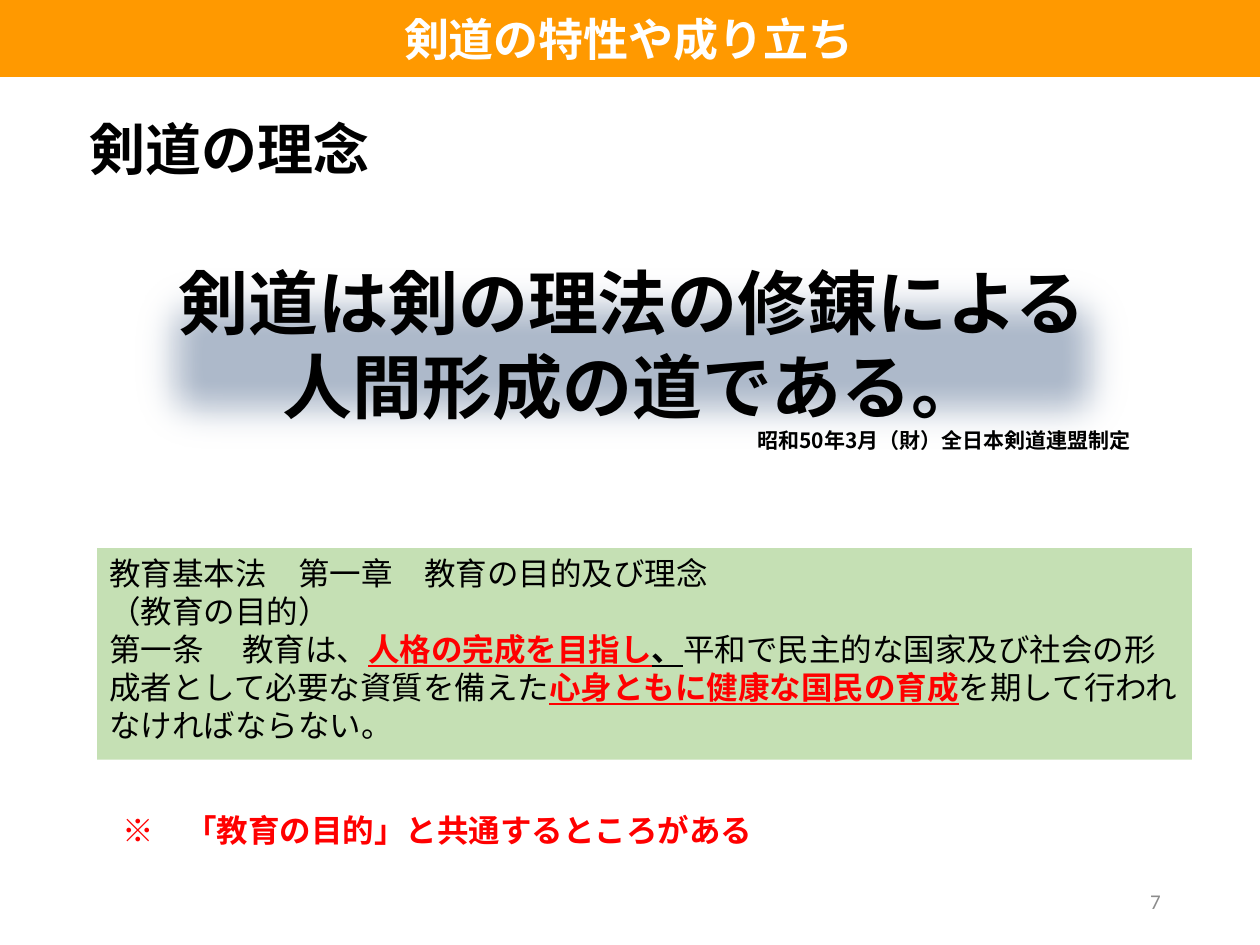
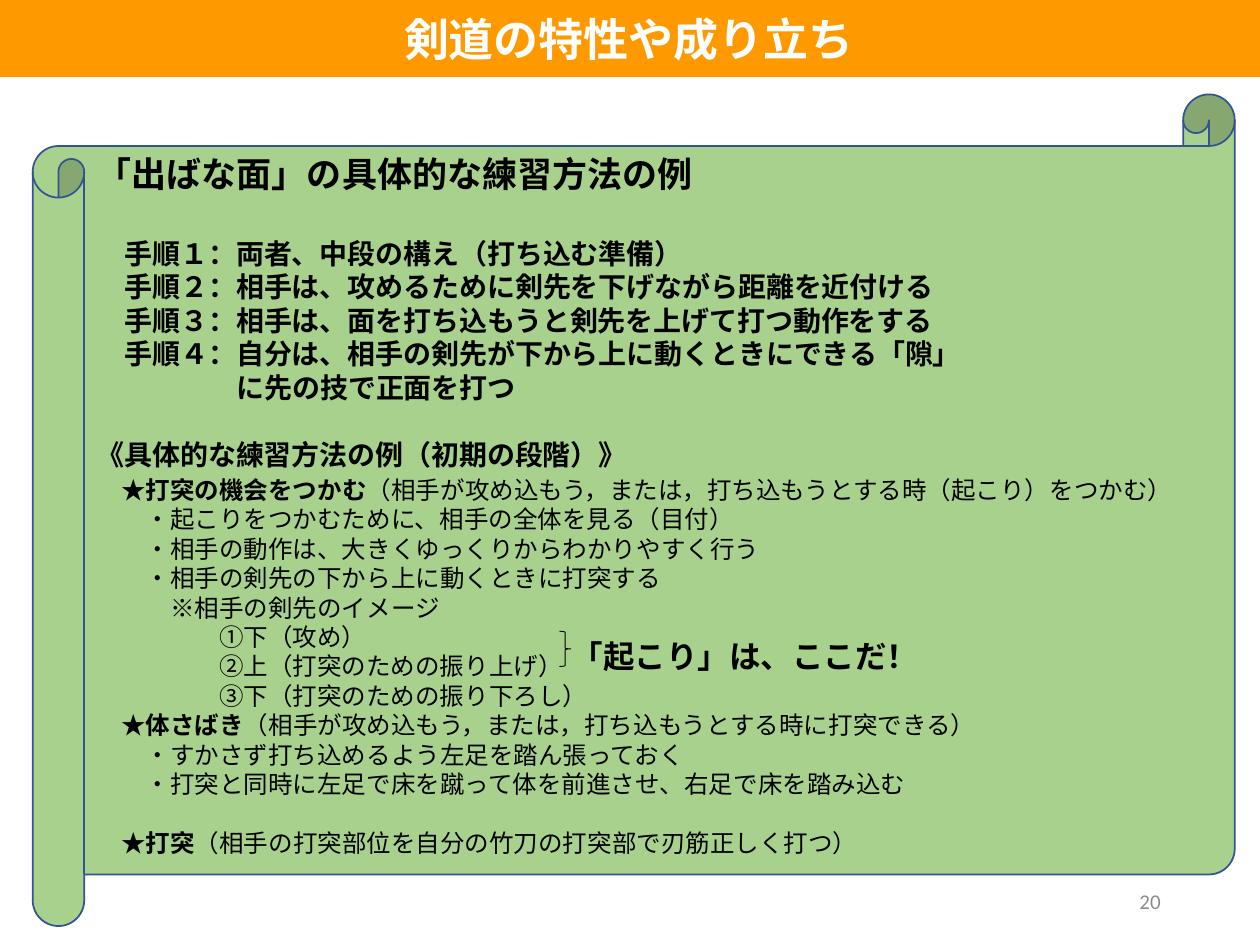
from dataclasses import dataclass

from lxml import etree
from pptx import Presentation
from pptx.dml.color import RGBColor
from pptx.enum.shapes import MSO_SHAPE as SHAPE
from pptx.enum.text import MSO_ANCHOR as ANCHOR, PP_ALIGN as ALIGN
from pptx.oxml.ns import qn
from pptx.util import Inches, Pt


@dataclass(frozen=True)
class Theme:
    font: str = "Noto Sans CJK JP"
    number_font: str = "Calibri"
    band: str = "FF9900"
    white: str = "FFFFFF"
    black: str = "000000"
    red: str = "FF0000"
    grey: str = "8C8C8C"
    motto: str = "ADB9CA"
    law: str = "C5E0B4"
    scroll: str = "A9D18E"
    scroll_line: str = "325491"
    band_size: float = 25.7
    title: int = 32
    motto_size: int = 40
    lead: int = 20
    body: int = 18
    step: int = 16
    detail: int = 14
    small: int = 12
    leading: float = 1.2


T = Theme()
KEY = {"color": T.red, "bold": True, "underline": True}


def rgb(value):
    return RGBColor.from_string(value)


def para(*runs, size=T.body, align=ALIGN.LEFT, indent=0, before=0, **fmt):
    """Describe a paragraph; a run is a string or (string, format), indent counts characters."""
    return {"runs": runs, "size": size, "align": align, "indent": indent,
            "before": before, "fmt": fmt}


def add_run(p, text, size, color=T.black, font=T.font, **fmt):
    r = p.add_run()
    r.text = text
    for name, value in {"size": Pt(size), "name": font, **fmt}.items():
        setattr(r.font, name, value)
    r.font.color.rgb = rgb(color)
    etree.SubElement(r.font._element, qn("a:ea"), typeface=font)


def write(s, paras, anchor=ANCHOR.TOP, wrap=True):
    tf = s.text_frame
    tf.word_wrap = wrap
    tf.vertical_anchor = anchor
    for i, item in enumerate(paras):
        p = tf.paragraphs[0] if i == 0 else tf.add_paragraph()
        size = item["size"]
        if item["indent"]:
            p._p.get_or_add_pPr().set("marL", str(Pt(item["indent"] * size)))
        for name, value in {"alignment": item["align"],
                            "line_spacing": Pt(size * T.leading),
                            "space_before": Pt(item["before"])}.items():
            setattr(p, name, value)
        for run in item["runs"]:
            text, extra = (run, {}) if isinstance(run, str) else run
            add_run(p, text, **{"size": size, **item["fmt"], **extra})


def add_text(sp, box, paras, **options):
    s = sp.add_textbox(*map(Inches, box))
    write(s, paras, **options)


def add_panel(sp, kind, box, fill=None, line=None, width=1):
    s = sp.add_shape(kind, *map(Inches, box))
    s.shadow.inherit = False
    if fill:
        s.fill.solid()
        s.fill.fore_color.rgb = rgb(fill)
    else:
        s.fill.background()
    if line:
        s.line.color.rgb = rgb(line)
        s.line.width = Pt(width)
    else:
        s.line.fill.background()
    return s


def soften(s, radius):
    effects = s._element.spPr.find(qn("a:effectLst"))
    etree.SubElement(effects, qn("a:softEdge"), rad=str(Inches(radius)))


def new_slide(prs, number):
    """Add a slide with the heading band and page number."""
    sp = prs.slides.add_slide(prs.slide_layouts[6]).shapes
    band = add_panel(sp, SHAPE.RECTANGLE, (-0.02, 0, 10.02, 0.61), T.band)
    tf = band.text_frame
    tf.margin_left = tf.margin_right = Inches(0.07)
    tf.margin_top = tf.margin_bottom = Inches(0.04)
    write(band, [para("剣道の特性や成り立ち", size=T.band_size, align=ALIGN.CENTER,
                      color=T.white, bold=True)], anchor=ANCHOR.MIDDLE, wrap=False)
    add_text(sp, (7.06, 6.95, 2.25, 0.4),
             [para(str(number), size=T.small, align=ALIGN.RIGHT, color=T.grey,
                   font=T.number_font)], anchor=ANCHOR.MIDDLE)
    return sp


def step(text, indent=1, before=0):
    return para(text, size=T.step, indent=indent, before=before, bold=True)


def star(name, note, before=0):
    return para("★", (name, {"bold": True}), note, size=T.detail, indent=1, before=before)


def detail(text, indent=2):
    return para(text, size=T.detail, indent=indent)


def idea_slide(prs):
    sp = new_slide(prs, 7)
    add_text(sp, (0.34, 0.86, 2.97, 0.64),
             [para("剣道の理念", size=T.title, align=ALIGN.CENTER, bold=True)])

    motto = add_panel(sp, SHAPE.RECTANGLE, (0.96, 2.01, 8.11, 1.65), T.motto)
    soften(motto, 0.35)
    lines = [para(text, size=T.motto_size, align=ALIGN.CENTER, bold=True)
             for text in ("剣道は剣の理法の修錬による", "人間形成の道である。")]
    write(motto, lines + [para("昭和50年3月（財）全日本剣道連盟制定", size=T.small,
                               align=ALIGN.RIGHT, bold=True)])

    add_text(sp, (0.87, 6.39, 8.49, 0.4),
             [para("※　「教育の目的」と共通するところがある", color=T.red, bold=True)])

    law = add_panel(sp, SHAPE.RECTANGLE, (0.77, 4.35, 8.69, 1.68), T.law)
    write(law, [
        para("教育基本法　第一章　教育の目的及び理念"),
        para("（教育の目的）"),
        para("第一条 　教育は、", ("人格の完成を目指し", KEY),
             ("、", {**KEY, "color": T.black}),
             "平和で民主的な国家及び社会の形成者として必要な資質を備えた",
             ("心身ともに健康な国民の育成", KEY),
             "を期して行われなければならない。"),
    ])


def practice_slide(prs):
    sp = new_slide(prs, 20)
    scroll = add_panel(sp, SHAPE.HORIZONTAL_SCROLL, (0.26, 0.75, 9.54, 6.6),
                       T.scroll, T.scroll_line)
    scroll.adjustments[0] = 0.062
    write(scroll, [
        para("「出ばな面」の具体的な練習方法の例", size=T.lead, bold=True),
        step("手順１：両者、中段の構え（打ち込む準備）", before=T.lead * T.leading),
        step("手順２：相手は、攻めるために剣先を下げながら距離を近付ける"),
        step("手順３：相手は、面を打ち込もうと剣先を上げて打つ動作をする"),
        step("手順４：自分は、相手の剣先が下から上に動くときにできる「隙」"),
        step("に先の技で正面を打つ", indent=5),
        step("《具体的な練習方法の例（初期の段階）》", indent=0,
             before=T.step * T.leading),
        star("打突の機会をつかむ",
             "（相手が攻め込もう，または，打ち込もうとする時（起こり）をつかむ）", before=2),
        detail("・起こりをつかむために、相手の全体を見る（目付）"),
        detail("・相手の動作は、大きくゆっくりからわかりやすく行う"),
        detail("・相手の剣先の下から上に動くときに打突する"),
        detail("※相手の剣先のイメージ", indent=3),
        detail("①下（攻め）", indent=5),
        detail("②上（打突のための振り上げ）", indent=5),
        detail("③下（打突のための振り下ろし）", indent=5),
        star("体さばき", "（相手が攻め込もう，または，打ち込もうとする時に打突できる）"),
        detail("・すかさず打ち込めるよう左足を踏ん張っておく"),
        detail("・打突と同時に左足で床を蹴って体を前進させ、右足で床を踏み込む"),
        star("打突", "（相手の打突部位を自分の竹刀の打突部で刃筋正しく打つ）",
             before=T.detail * T.leading),
    ])
    add_panel(sp, SHAPE.RIGHT_BRACE, (4.44, 5.01, 0.09, 0.28), line=T.black, width=0.5)
    add_text(sp, (4.44, 5.01, 2.98, 0.4),
             [para("「起こり」は、ここだ！", bold=True)], wrap=False)


def main():
    prs = Presentation()
    prs.slide_width, prs.slide_height = Inches(10), Inches(7.5)
    idea_slide(prs)
    practice_slide(prs)
    prs.save("out.pptx")


if __name__ == "__main__":
    main()
